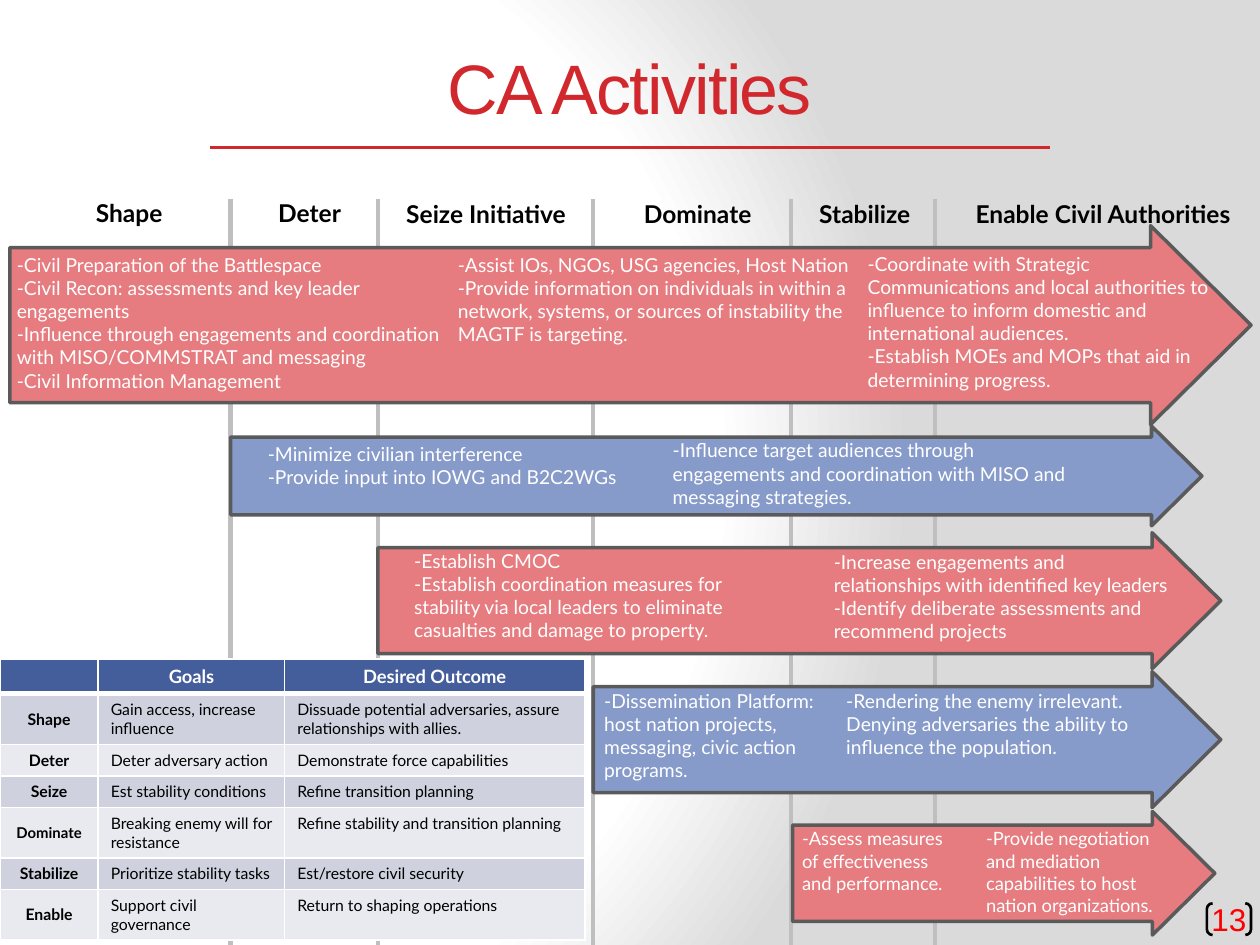
from lxml import etree
from pptx import Presentation
from pptx.dml.color import RGBColor
from pptx.enum.shapes import MSO_CONNECTOR as Conn, MSO_SHAPE as Geo
from pptx.enum.text import MSO_ANCHOR as Anchor, MSO_AUTO_SIZE as Auto, PP_ALIGN as Align
from pptx.oxml import parse_xml
from pptx.oxml.ns import qn
from pptx.util import Cm, Pt

NS = ('xmlns:a="http://schemas.openxmlformats.org/drawingml/2006/main" '
      'xmlns:p="http://schemas.openxmlformats.org/presentationml/2006/main"')
RED, BLUE, WHITE, BLACK = "E67C7F", "879BCA", "FFFFFF", "000000"
BODY = {"name": "Lato", "size": Pt(11), "bold": False}
SMALL = {**BODY, "size": Pt(10.5)}
HEAD = {"name": "Lato", "size": Pt(14), "bold": True}

PHASES = [  # text, left, top, width
    ("Shape", 1.27, 3.86, 2.67), ("Deter", 5.16, 3.86, 2.16),
    ("Seize Initiative", 7.49, 3.89, 4.62), ("Dominate", 12.4, 3.89, 3.33),
    ("Stabilize", 15.77, 3.89, 3.33), ("Enable Civil Authorities", 18.85, 3.89, 6.78),
]
BOUNDS = [18.85, 7.62, 11.96, 15.95, 4.65]

ARROWS = [  # box, fill, font, notes: (offset box, lines)
    ((0.2, 4.55, 25.02, 4.01), RED, BODY, [
        ((-0.41, 0.43, 9.53, 3.07), [
            "-Civil Preparation of the Battlespace",
            "-Civil Recon: assessments and key leader engagements",
            "-Influence through engagements and coordination with MISO/COMMSTRAT and messaging",
            "-Civil Information Management"]),
        ((8.48, 0.43, 9.65, 2.13), [
            "-Assist IOs, NGOs, USG agencies, Host Nation",
            "-Provide information on individuals in within a network, systems, "
            "or sources of instability the MAGTF is targeting."]),
        ((16.74, 0.41, 7.8, 3.07), [
            "-Coordinate with Strategic Communications and local authorities to "
            "influence to inform domestic and international audiences.",
            "-Establish MOEs and MOPs that aid in determining progress."])]),
    ((4.65, 8.59, 19.58, 2.01), BLUE, BODY, [
        ((0.2, 0.2, 8.33, 1.19), [
            "-Minimize civilian interference",
            "-Provide input into IOWG and B2C2WGs"]),
        ((8.36, 0.13, 8.74, 1.65), [
            "-Influence target audiences through engagements and coordination "
            "with MISO and messaging strategies."])]),
    ((7.62, 10.74, 16.99, 2.74), RED, BODY, [
        ((0.18, 0.2, 7.24, 2.13), [
            "-Establish CMOC",
            "-Establish coordination measures for stability via local leaders "
            "to eliminate casualties and damage to property."]),
        ((8.64, 0.23, 7.59, 2.13), [
            "-Increase engagements and relationships with identified key leaders",
            "-Identify deliberate assessments and recommend projects"])]),
    ((11.96, 13.54, 12.65, 2.74), BLUE, BODY, [
        ((-0.33, 0.23, 5.21, 2.13), [
            "-Dissemination Platform: host nation projects, messaging, civic action programs."]),
        ((4.55, 0.23, 6.99, 1.68), [
            "-Rendering the enemy irrelevant. Denying adversaries the ability "
            "to influence the population."])]),
    ((15.98, 16.36, 8.51, 2.49), RED, SMALL, [
        ((-0.36, 0.2, 3.71, 2.06), [
            "-Assess measures of effectiveness and performance."]),
        ((3.35, 0.2, 4.62, 2.06), [
            "-Provide negotiation and mediation capabilities to host nation organizations."])]),
]

GOALS = [
    ("", "Goals", "Desired Outcome"),
    ("Shape", "Gain access, increase influence",
     "Dissuade potential adversaries, assure relationships with allies."),
    ("Deter", "Deter adversary action", "Demonstrate force capabilities"),
    ("Seize", "Est stability conditions", "Refine transition planning"),
    ("Dominate", "Breaking enemy will for resistance",
     "Refine stability and transition planning"),
    ("Stabilize", "Prioritize stability tasks", "Est/restore civil security"),
    ("Enable", "Support civil governance", "Return to shaping operations"),
]
COLS = [1.98, 3.76, 6.05]
ROWS = [0.7, 1.02, 0.63, 0.63, 1.02, 0.63, 1.02]


def rgb(code):
    return RGBColor.from_string(code)


def write(para, text, font, color, align=Align.LEFT):
    para.alignment = align
    run = para.add_run()
    run.text = text
    for key, val in font.items():
        setattr(run.font, key, val)
    run.font.color.rgb = rgb(color)
    return run


def label(shapes, box, lines, font, color, align=Align.LEFT, indent=0):
    frame = shapes.add_textbox(*map(Cm, box)).text_frame
    frame.word_wrap = True
    frame.auto_size = Auto.SHAPE_TO_FIT_TEXT
    for i, text in enumerate(lines):
        para = frame.add_paragraph() if i else frame.paragraphs[0]
        write(para, text, font, color, align)
        if indent:
            para._p.get_or_add_pPr().set("marL", str(Cm(indent)))
    return frame


def rule(shapes, ends, color, width):
    line = shapes.add_connector(Conn.STRAIGHT, *map(Cm, ends))
    line.line.color.rgb = rgb(color)
    line.line.width = Pt(width)
    etree.SubElement(line._element.spPr, qn("a:effectLst"))


def backdrop(slide):
    stops = "".join(f'<a:gs pos="{pos}000"><a:srgbClr val="{code}"/></a:gs>'
                    for pos, code in ((0, WHITE), (75, WHITE), (100, "DADADA")))
    slide._element.cSld.insert(0, parse_xml(
        f'<p:bg {NS}><p:bgPr><a:gradFill rotWithShape="1"><a:gsLst>{stops}</a:gsLst>'
        '<a:path path="circle"><a:fillToRect l="20000" t="50000" r="100000" b="50000"/>'
        '</a:path></a:gradFill><a:effectLst/></p:bgPr></p:bg>'))


def title(shapes, x, y, w, h):
    rule(shapes, (x + 0.43, y + 2.33, x + w - 0.43, y + 2.33), "D1282E", 2)
    frame = label(shapes, (x, y, w, h), ["CA Activities"],
                  {"name": "Arial", "size": Pt(40)}, "D1282E", Align.CENTER)
    frame.auto_size = Auto.NONE
    frame.margin_top = Cm(0.25)
    frame.paragraphs[0].runs[0].font._element.set("spc", "-100")


def edge(cell, side, width):
    cell._tc.get_or_add_tcPr().append(parse_xml(
        f'<a:{side} {NS} w="{Pt(width)}"><a:solidFill><a:srgbClr val="{WHITE}"/>'
        f'</a:solidFill></a:{side}>'))


def goals(shapes, x, y):
    grid = shapes.add_table(len(ROWS), len(COLS), Cm(x), Cm(y),
                            Cm(sum(COLS)), Cm(sum(ROWS))).table
    for col, size in zip(grid.columns, COLS):
        col.width = Cm(size)
    for r, (row, size) in enumerate(zip(grid.rows, ROWS)):
        row.height = Cm(size)
        for c, (cell, text) in enumerate(zip(row.cells, GOALS[r])):
            top, side = r == 0, c == 0
            for name in ("lnL", "lnR", "lnT", "lnB"):
                thick = (top and name == "lnB") or (r == 1 and name == "lnT")
                edge(cell, name, 3 if thick else 1)
            cell.fill.solid()
            cell.fill.fore_color.rgb = rgb(
                "445D9B" if top else "CFD2DE" if r % 2 else "E9EAEF")
            cell.vertical_anchor = Anchor.MIDDLE if side and not top else Anchor.TOP
            para = cell.text_frame.paragraphs[0]
            size = 10.5 if top else 8.5 if text == "Dominate" else 9
            if text:
                write(para, text, {"name": "Lato", "size": Pt(size), "bold": top or side},
                      WHITE if top else BLACK,
                      Align.CENTER if top or side else Align.LEFT)
            else:
                para._p.get_or_add_endParaRPr().set("sz", str(int(size * 100)))


def arrow(shapes, box, fill, font, notes):
    group = shapes.add_group_shape().shapes
    body = group.add_shape(Geo.RIGHT_ARROW, *map(Cm, box))
    body.shadow.inherit = False
    body.adjustments[0], body.adjustments[1] = 0.78, 0.505
    body.fill.solid()
    body.fill.fore_color.rgb = rgb(fill)
    body.line.color.rgb = rgb("5A5A5A")
    body.line.width = Pt(2)
    for (dx, dy, w, h), lines in notes:
        label(group, (box[0] + dx, box[1] + dy, w, h), lines, font, WHITE, indent=0.3)


def number(shapes, box, text):
    mark = shapes.add_shape(Geo.DOUBLE_BRACKET, *map(Cm, box))
    mark.shadow.inherit = False
    mark.adjustments[0] = 0.18
    mark.fill.background()
    mark.line.color.rgb = rgb(BLACK)
    mark.line.width = Pt(1.5)
    frame = mark.text_frame
    form = {"margin_left": 0, "margin_right": 0, "margin_top": 0, "margin_bottom": 0,
            "word_wrap": False, "vertical_anchor": Anchor.MIDDLE}
    for key, val in form.items():
        setattr(frame, key, val)
    write(frame.paragraphs[0], text, {"name": "Arial", "size": Pt(18)}, "FF0000", Align.CENTER)


def main():
    deck = Presentation()
    deck.slide_width, deck.slide_height = Cm(25.4), Cm(19.05)
    slide = deck.slides.add_slide(deck.slide_layouts[6])
    shapes = slide.shapes
    backdrop(slide)
    # Phase boundaries lie behind everything else
    for x in BOUNDS:
        rule(shapes, (x, 4.01, x, 19.05), "BFBFBF", 2.5)
    goals(shapes, 0, 13.28)
    number(shapes, (24.33, 18.21, 0.89, 0.64), "13")
    title(shapes, 3.81, 0.64, 17.78, 3.18)
    # Phase headings
    for text, x, y, w in PHASES:
        label(shapes, (x, y, w, 0.86), [text], HEAD, BLACK, Align.CENTER)
    # Activity arrows
    for parts in ARROWS:
        arrow(shapes, *parts)
    deck.save("out.pptx")


if __name__ == "__main__":
    main()
